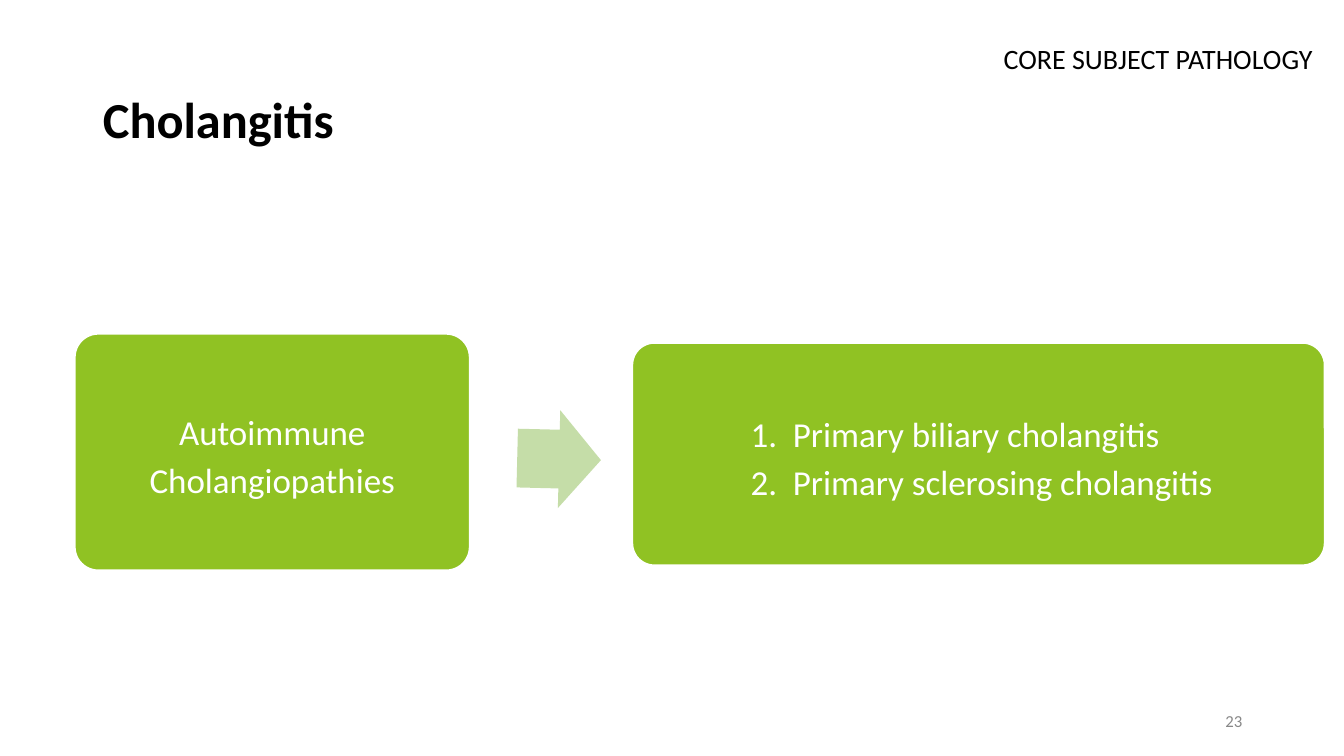
import pptx
import pptx.util
import pptx.dml.color
import pptx.enum.shapes
import pptx.enum.text
import lxml.etree

Inch, Pt = pptx.util.Inches, pptx.util.Pt
Shape = pptx.enum.shapes.MSO_SHAPE
Align = pptx.enum.text.PP_ALIGN
Anchor = pptx.enum.text.MSO_ANCHOR
WIDE, HIGH = 13.33, 7.5
GREEN, PALE, WHITE, BLACK, GREY = "90C223", "C5DDA8", "FFFFFF", "000000", "888888"


def color(code):
    return pptx.dml.color.RGBColor.from_string(code)


def place(item, box):
    item.left, item.top, item.width, item.height = map(Inch, box)


def write(frame, text, size, code, align, bold=False, space=None, pads=(0.1, 0.05, 0.1, 0.05)):
    """Fill a text frame; each line of text is a paragraph."""
    frame.text = text
    frame.word_wrap = True
    frame.auto_size = pptx.enum.text.MSO_AUTO_SIZE.NONE
    frame.vertical_anchor = Anchor.MIDDLE
    frame.margin_left, frame.margin_top, frame.margin_right, frame.margin_bottom = map(Inch, pads)
    for para in frame.paragraphs:
        para.alignment = align
        if space:
            para.line_spacing = space
        for run in para.runs:
            font = run.font
            font.name, font.size, font.bold = "Calibri", Pt(size), bold
            font.color.rgb = color(code)


def number(frame):
    """Number the paragraphs with a hanging indent."""
    for para in frame.paragraphs:
        props = para._p.get_or_add_pPr()
        props.set("marL", str(Inch(0.5)))
        props.set("indent", str(-Inch(0.42)))
        tag = pptx.oxml.ns.qn("a:buAutoNum")
        lxml.etree.SubElement(props, tag, type="arabicPeriod")


def label(slide, box, text, size, code, pads):
    note = slide.shapes.add_textbox(*map(Inch, box))
    write(note.text_frame, text, size, code, Align.RIGHT, pads=pads)
    return note


def head(slide, box):
    """Title with the subject line at its upper right."""
    left, top, width, height = box
    place(slide.shapes.title, box)
    write(slide.shapes.title.text_frame, "Cholangitis", 36, BLACK, Align.LEFT, True, 1.15)
    label(slide, (left + width - 3.65, top, 4.25, 0.35), "CORE SUBJECT PATHOLOGY",
          20, BLACK, (0, 0.01, 0, 0)).text_frame.vertical_anchor = Anchor.TOP


def block(slide, kind, box, fill, *ratios):
    part = slide.shapes.add_shape(kind, *map(Inch, box))
    part.shadow.inherit = False
    part.fill.solid()
    part.fill.fore_color.rgb = color(fill)
    part.line.fill.background()
    for spot, ratio in enumerate(ratios):
        part.adjustments[spot] = ratio
    return part


def card(slide, box, text, align, pad):
    part = block(slide, Shape.ROUNDED_RECTANGLE, box, GREEN, 0.1)
    part.line.color.rgb = color(WHITE)
    part.line.width = Pt(1.5)
    write(part.text_frame, text, 25, WHITE, align, space=1.15, pads=(pad, 0.1, 0.1, 0.1))
    return part


def flow(slide, box):
    """Group of diseases, arrow, and its numbered members."""
    left, top, width, height = box
    card(slide, (left, top, 3.92, height), "Autoimmune Cholangiopathies", Align.CENTER, 0.1)
    arrow = block(slide, Shape.RIGHT_ARROW, (left + 4.39, top + 0.76, 0.83, 0.97), PALE, 0.6, 0.5)
    arrow.rotation = 1.4
    span = 6.87
    types = card(slide, (left + width - span, top + 0.09, span, 2.21),
                 "Primary biliary cholangitis\nPrimary sclerosing cholangitis", Align.LEFT, 1.03)
    number(types.text_frame)


def main():
    deck = pptx.Presentation()
    deck.slide_width, deck.slide_height = Inch(WIDE), Inch(HIGH)
    slide = deck.slides.add_slide(deck.slide_layouts[5])
    head(slide, (0.92, 0.4, 11.5, 1.45))
    flow(slide, (0.74, 3.31, 12.4, 2.35))
    # Page number
    label(slide, (9.42, 6.95, 3, 0.4), "23", 12, GREY, (0.1, 0.05, 0.1, 0.05))
    deck.save("out.pptx")


if __name__ == "__main__":
    main()
